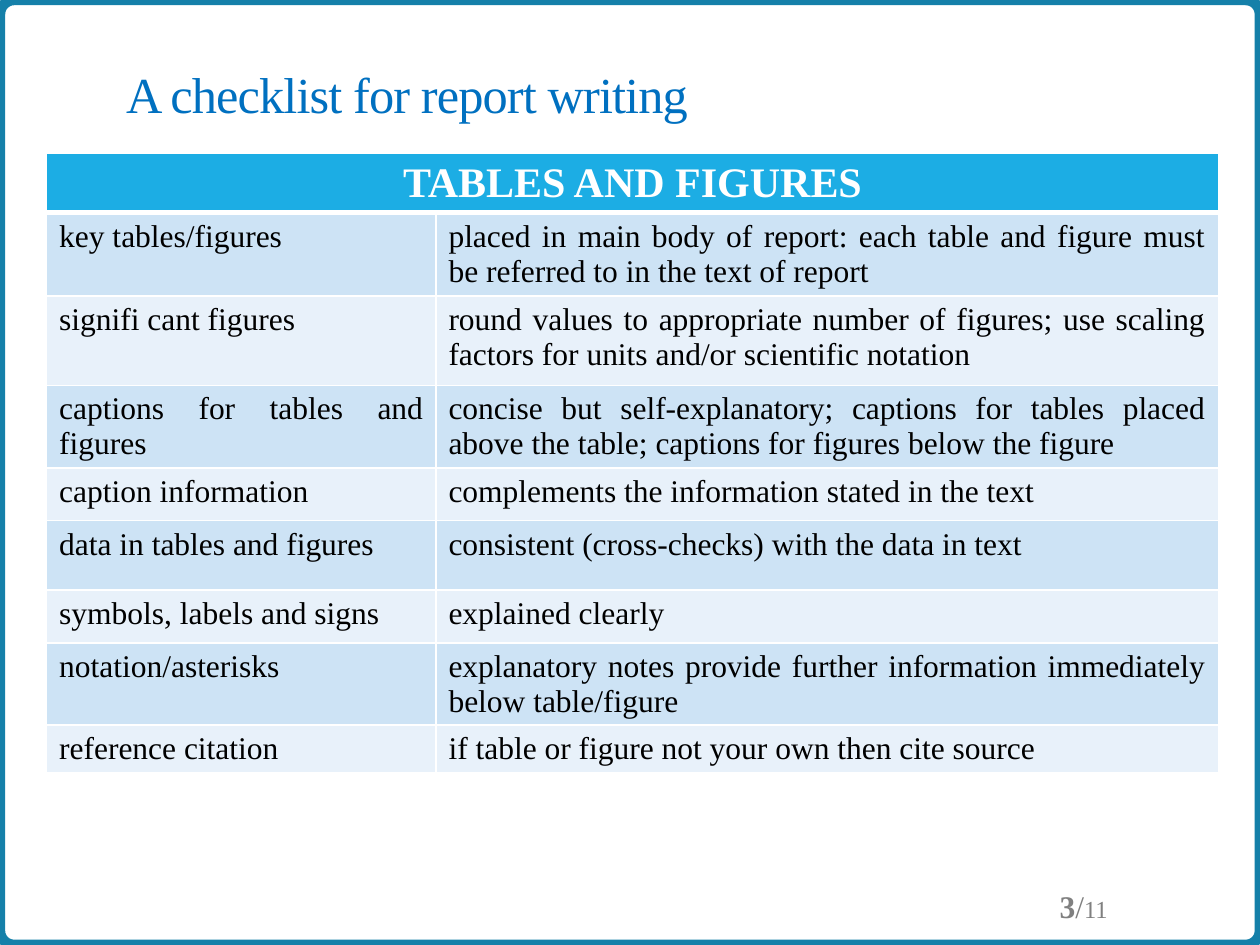
from lxml import etree
from pptx import Presentation
from pptx.dml.color import RGBColor
from pptx.enum.shapes import MSO_SHAPE
from pptx.enum.text import MSO_ANCHOR, PP_ALIGN
from pptx.oxml.ns import qn
from pptx.util import Inches, Pt

ROUNDED = MSO_SHAPE.ROUNDED_RECTANGLE
MIDDLE, BOTTOM = MSO_ANCHOR.MIDDLE, MSO_ANCHOR.BOTTOM
CENTER, JUSTIFY, RIGHT = PP_ALIGN.CENTER, PP_ALIGN.JUSTIFY, PP_ALIGN.RIGHT

FONT = "Times New Roman"
COLORS = {
    "frame": "1580A9",
    "title": "0070C0",
    "header": "1CADE4",
    "odd": "CDE3F5",
    "even": "E8F1FA",
    "white": "FFFFFF",
    "text": "000000",
    "number": "808080",
}
TITLE = "A checklist for report writing"
HEADER = "TABLES AND FIGURES"
ROWS = [
    ("key tables/figures", "placed in main body of report: each table and figure must be referred to in the text of report", 0.66),
    ("signifi cant figures", "round values to appropriate number of figures; use scaling factors for units and/or scientific notation", 0.71),
    ("captions for tables and figures", "concise but self-explanatory; captions for tables placed above the table; captions for figures below the figure", 0.65),
    ("caption information", "complements the information stated in the text", 0.42),
    ("data in tables and figures", "consistent (cross-checks) with the data in text", 0.55),
    ("symbols, labels and signs", "explained clearly", 0.42),
    ("notation/asterisks", "explanatory notes provide further information immediately below table/figure", 0.65),
    ("reference citation", "if table or figure not your own then cite source", 0.37),
]
HEADER_HEIGHT = 0.46
COLUMNS = (3.09, 6.21)
PAGE_NUMBER = [("3", 18, True), ("/", 18, False), ("11", 14, False)]


def color(name):
    return RGBColor.from_string(COLORS[name])


def style(font, size, color_name, bold=False):
    font.name = FONT
    font.size = Pt(size)
    font.bold = bold
    font.color.rgb = color(color_name)


def add_borders(cell, top, bottom):
    properties = cell._tc.get_or_add_tcPr()
    for side, width in (("L", 1), ("R", 1), ("T", top), ("B", bottom)):
        line = etree.SubElement(properties, qn(f"a:ln{side}"), w=str(Pt(width)))
        fill = etree.SubElement(line, qn("a:solidFill"))
        etree.SubElement(fill, qn("a:srgbClr"), val=COLORS["white"])


def fill_cell(cell, text, fill, size, color_name, align, bold=False, top=1, bottom=1):
    add_borders(cell, top, bottom)
    cell.fill.solid()
    cell.fill.fore_color.rgb = color(fill)
    cell.text = text
    para = cell.text_frame.paragraphs[0]
    para.alignment = align
    style(para.font, size, color_name, bold)


def add_frame(page, deck):
    frame = page.shapes.add_shape(ROUNDED, 0, 0, deck.slide_width, deck.slide_height)
    frame.adjustments[0] = 0.015
    frame.shadow.inherit = False
    frame.fill.background()
    frame.line.color.rgb = color("frame")
    frame.line.width = Pt(6)


def add_title(page):
    title = page.shapes.title
    title.left, title.top = Inches(0.9), Inches(0.31)
    title.width, title.height = Inches(8.25), Inches(0.72)
    title.text_frame.vertical_anchor = BOTTOM
    para = title.text_frame.paragraphs[0]
    para.alignment = PP_ALIGN.LEFT
    para.line_spacing = 0.85
    span = para.add_run()
    span.text = TITLE
    style(span.font, 28.8, "title")
    span._r.get_or_add_rPr().set("spc", "-50")


def add_checklist(page):
    heights = [HEADER_HEIGHT] + [height for _, _, height in ROWS]
    table = page.shapes.add_table(
        len(heights), len(COLUMNS), Inches(0.37), Inches(1.22),
        Inches(sum(COLUMNS)), Inches(sum(heights)),
    ).table
    for column, width in zip(table.columns, COLUMNS):
        column.width = Inches(width)
    for row, height in zip(table.rows, heights):
        row.height = Inches(height)
    table.cell(0, 0).merge(table.cell(0, 1))
    fill_cell(table.cell(0, 0), HEADER, "header", 24, "white", CENTER, True, bottom=3)
    for number, (item, advice, _) in enumerate(ROWS, start=1):
        fill = "odd" if number % 2 else "even"
        for column, text in enumerate((item, advice)):
            fill_cell(table.cell(number, column), text, fill, 18, "text", JUSTIFY,
                      top=3 if number == 1 else 1)


def add_page_number(page):
    box = page.shapes.add_textbox(Inches(7.81), Inches(6.99), Inches(1.08), Inches(0.4))
    box.text_frame.word_wrap = True
    box.text_frame.vertical_anchor = MIDDLE
    para = box.text_frame.paragraphs[0]
    para.alignment = RIGHT
    for text, size, bold in PAGE_NUMBER:
        span = para.add_run()
        span.text = text
        style(span.font, size, "number", bold)


def main():
    deck = Presentation()
    deck.slide_width, deck.slide_height = Inches(10), Inches(7.5)
    page = deck.slides.add_slide(deck.slide_layouts[5])
    add_frame(page, deck)
    add_title(page)
    add_checklist(page)
    add_page_number(page)
    deck.save("out.pptx")


if __name__ == "__main__":
    main()
